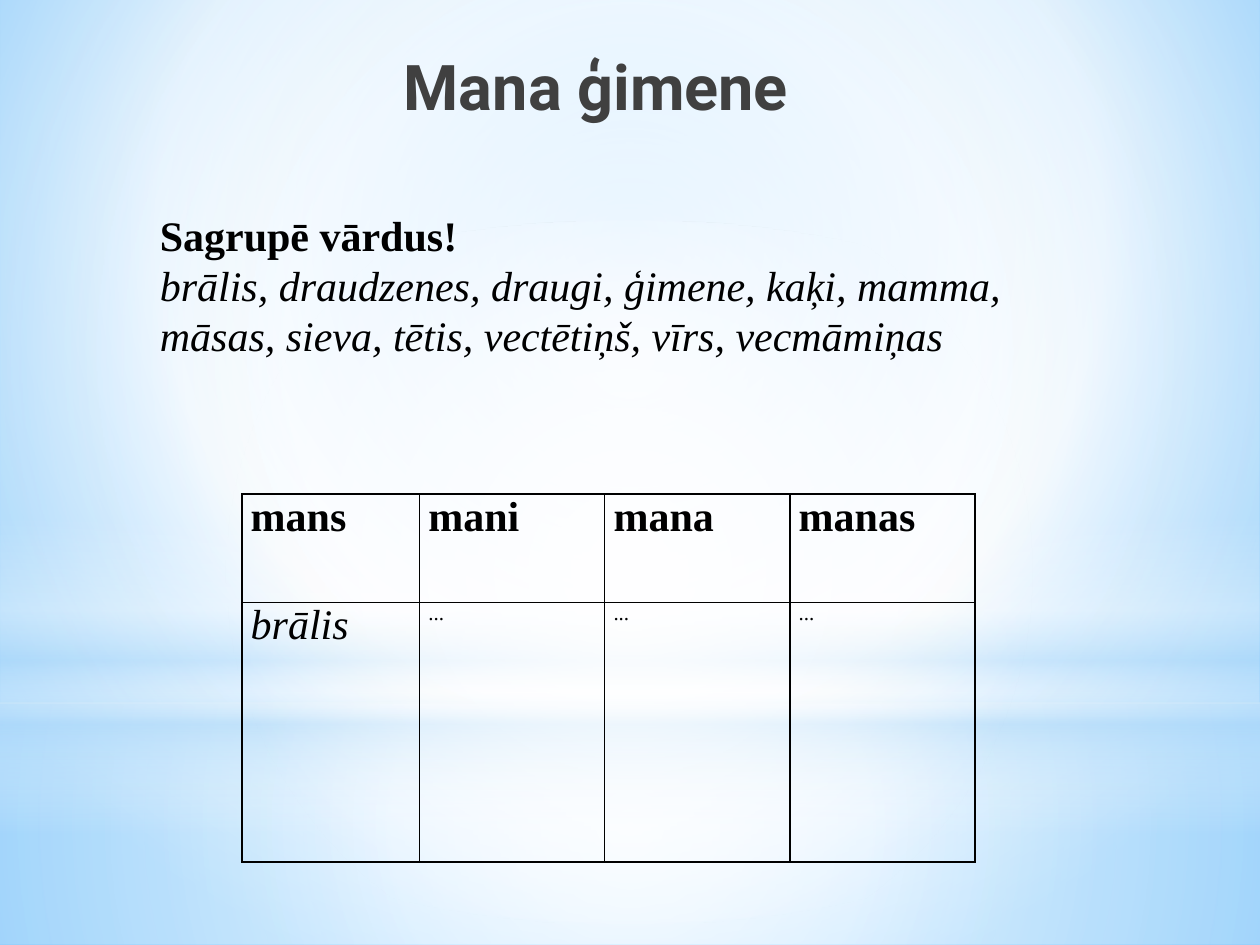
from dataclasses import dataclass

from lxml import etree
from pptx import Presentation
from pptx.dml.color import RGBColor
from pptx.enum import shapes, text
from pptx.oxml.ns import qn
from pptx.util import Inches, Pt

WIDTH, HEIGHT = 10, 7.5


@dataclass(frozen=True)
class Theme:
    ink: str = "000000"
    heading: str = "404040"
    white: str = "FFFFFF"
    mist: str = "B4DCFA"
    sky: str = "9ED5FF"
    deep_sky: str = "5BB9FF"
    heading_font: str = "Roboto"
    body_font: str = "Times New Roman"
    heading_size: int = 36
    body_size: int = 24
    dots_size: int = 12
    border: int = 1


THEME = Theme()
CENTER = (50, 50, 50, 50)


def add_color(parent, color, alpha=100):
    node = etree.SubElement(parent, qn("a:srgbClr"), val=color)
    if alpha < 100:
        etree.SubElement(node, qn("a:alpha"), val=str(alpha * 1000))


def set_gradient(fill, owner, stops, focus=None):
    """Radial gradient towards focus, or top to bottom without one."""
    fill.gradient()
    gradient = owner.find(".//" + qn("a:gradFill"))
    for child in list(gradient):
        gradient.remove(child)
    stop_list = etree.SubElement(gradient, qn("a:gsLst"))
    for position, *color in stops:
        stop = etree.SubElement(stop_list, qn("a:gs"), pos=str(position * 1000))
        add_color(stop, *color)
    if focus:
        circle = etree.SubElement(gradient, qn("a:path"), path="circle")
        sides = {side: str(share * 1000) for side, share in zip("ltrb", focus)}
        etree.SubElement(circle, qn("a:fillToRect"), **sides)
    else:
        etree.SubElement(gradient, qn("a:lin"), ang="5400000", scaled="0")


def add_glow(slide, kind, top, height, stops, focus=None):
    glow = slide.shapes.add_shape(kind, 0, Inches(top), Inches(WIDTH), Inches(height))
    glow.shadow.inherit = False
    glow.line.fill.background()
    set_gradient(glow.fill, glow._element, stops, focus)


def add_run(paragraph, words, size, font=THEME.body_font, color=THEME.ink,
            bold=False, italic=False):
    run = paragraph.add_run()
    run.text = words
    run.font.size, run.font.name = Pt(size), font
    run.font.bold, run.font.italic = bold, italic
    run.font.color.rgb = RGBColor.from_string(color)


def add_text_frame(slide, left, top, width, height):
    box = slide.shapes.add_textbox(*map(Inches, (left, top, width, height)))
    box.text_frame.word_wrap = True
    return box.text_frame


def set_borders(cell):
    properties = cell._tc.get_or_add_tcPr()
    for index, side in enumerate(("lnL", "lnR", "lnT", "lnB")):
        line = etree.Element(qn("a:" + side), w=str(Pt(THEME.border)))
        add_color(etree.SubElement(line, qn("a:solidFill")), THEME.ink)
        properties.insert(index, line)


def add_backdrop(slide):
    white, mist = THEME.white, THEME.mist
    rectangle, oval = shapes.MSO_SHAPE.RECTANGLE, shapes.MSO_SHAPE.OVAL
    horizon = 5.58
    set_gradient(slide.background.fill, slide._element,
                 [(0, THEME.sky), (60, white), (100, THEME.deep_sky)],
                 (20, 10, 20, 60))
    add_glow(slide, rectangle, horizon, HEIGHT - horizon,
             [(0, white, 91), (37, white, 76), (100, mist, 79)], CENTER)
    add_glow(slide, rectangle, 0, horizon,
             [(0, white, 89), (48, white, 62), (100, mist, 79)], CENTER)
    add_glow(slide, rectangle, 4.12, 2.5,
             [(0, white, 0), (29, white, 30), (45, mist, 40),
              (55, white, 26), (65, mist, 60), (100, white, 0)])
    add_glow(slide, oval, 1.75, horizon, [(0, white), (56, white, 0)], CENTER)


def add_title(slide):
    heading = add_text_frame(slide, 1.17, 0.33, 7.12, 1.25).paragraphs[0]
    heading.alignment = text.PP_ALIGN.CENTER
    add_run(heading, "Mana ģimene", THEME.heading_size, THEME.heading_font,
            THEME.heading, bold=True)


def add_task(slide):
    task = add_text_frame(slide, 1.17, 1.61, 7.75, 1.62)
    add_run(task.paragraphs[0], "Sagrupē vārdus!", THEME.body_size, bold=True)
    add_run(task.add_paragraph(),
            "brālis, draudzenes, draugi, ģimene, kaķi, mamma, māsas, sieva, "
            "tētis, vectētiņš, vīrs, vecmāmiņas", THEME.body_size, italic=True)


def add_word_table(slide):
    headers = ("mans", "mani", "mana", "manas")
    answers = ("brālis", "...", "...", "...")
    column_widths, row_heights = (1.41, 1.47, 1.47, 1.47), (0.86, 2.06)
    table = slide.shapes.add_table(
        len(row_heights), len(headers), Inches(1.92), Inches(3.92),
        Inches(sum(column_widths)), Inches(sum(row_heights))).table
    table.horz_banding = table.first_row = False
    for column, width in zip(table.columns, column_widths):
        column.width = Inches(width)
    for row, height in zip(table.rows, row_heights):
        row.height = Inches(height)
    for row, words in enumerate((headers, answers)):
        for column, word in enumerate(words):
            cell = table.cell(row, column)
            cell.margin_left = cell.margin_right = Inches(0.07)
            cell.margin_top = cell.margin_bottom = 0
            cell.fill.background()
            set_borders(cell)
            dots = word == "..."
            add_run(cell.text_frame.paragraphs[0], word,
                    THEME.dots_size if dots else THEME.body_size,
                    bold=row == 0, italic=row == 1 and not dots)


def main():
    deck = Presentation()
    deck.slide_width, deck.slide_height = Inches(WIDTH), Inches(HEIGHT)
    slide = deck.slides.add_slide(deck.slide_layouts[6])
    # Sky with soft light
    add_backdrop(slide)
    # Heading, task and answer grid
    add_title(slide)
    add_task(slide)
    add_word_table(slide)
    deck.save("out.pptx")


if __name__ == "__main__":
    main()
